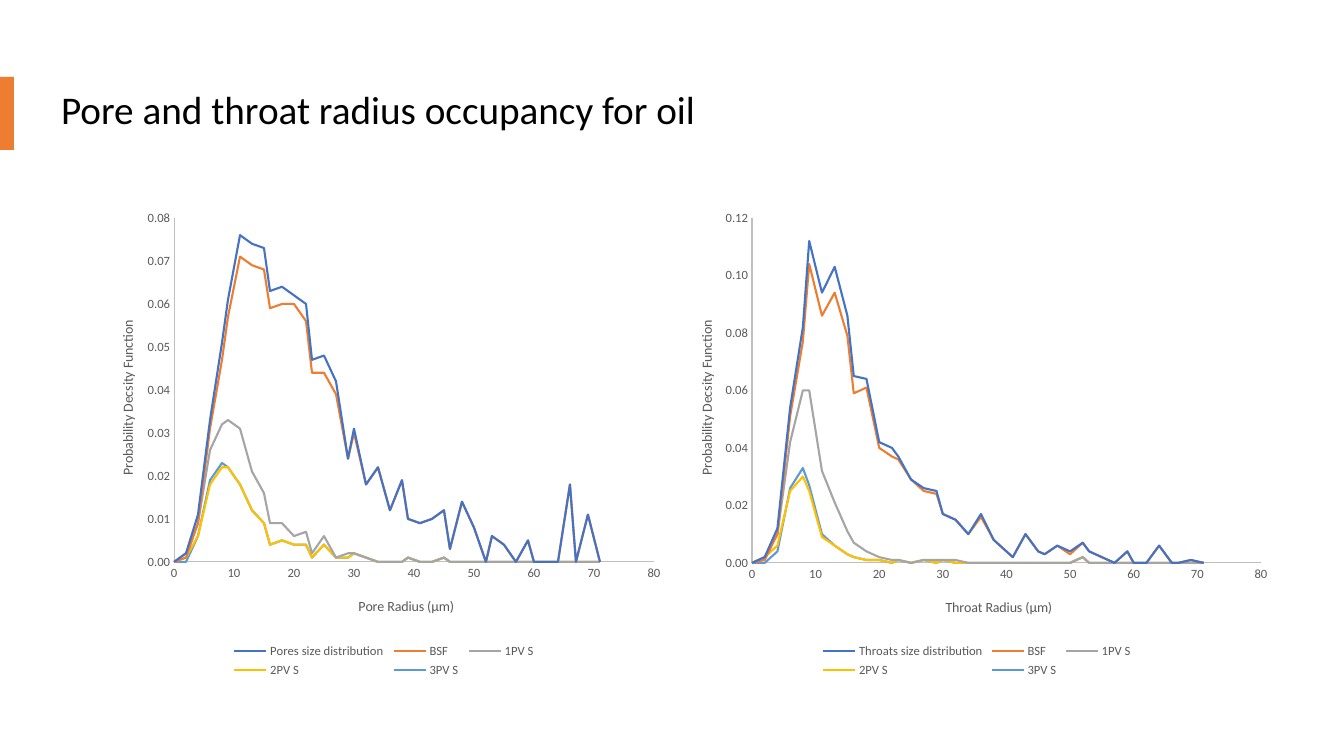
"""Build a slide comparing pore and throat radius occupancy for oil."""
import lxml.etree
import pptx
import pptx.chart.data
import pptx.dml.color
import pptx.enum.chart
import pptx.enum.shapes
import pptx.enum.text
import pptx.oxml.ns
import pptx.util

PX = 914400 / 100.8
GREY = "595959"
TOP, HEIGHT = 202, 480
RADII = [0] + [round(1.76 * k + 0.56) for k in range(1, 41)]
COLORS = ["4472C4", "ED7D31", "A5A5A5", "FFC000", "5B9BD5"]

PORES = {
    "Pores size distribution": [
        0, 2, 11, 33, 51, 61, 76, 74, 73, 63, 64, 62, 60, 47, 48, 42, 24, 31, 18, 22, 12,
        19, 10, 9, 10, 12, 3, 14, 8, 0, 6, 4, 0, 5, 0, 0, 0, 18, 0, 11],
    "BSF": [
        0, 1, 9, 31, 47, 57, 71, 69, 68, 59, 60, 60, 56, 44, 44, 39, 24, 30, 18, 22, 12,
        19, 10, 9, 10, 12, 3, 14, 8, 0, 6, 4, 0, 5, 0, 0, 0, 18, 0, 11],
    "1PV S": [
        0, 2, 9, 26, 32, 33, 31, 21, 16, 9, 9, 6, 7, 2, 6, 1, 2, 2, 1, 0, 0, 0, 1, 0, 0, 1],
    "2PV S": [
        0, 1, 6, 18, 22, 22, 18, 12, 9, 4, 5, 4, 4, 1, 4, 1, 1, 2, 1, 0, 0, 0, 1, 0, 0, 1],
    "3PV S": [
        0, 0, 6, 19, 23, 22, 18, 12, 9, 4, 5, 4, 4, 1, 4, 1, 1, 2, 1, 0, 0, 0, 1, 0, 0, 1],
}
THROATS = {
    "Throats size distribution": [
        0, 2, 12, 54, 82, 112, 94, 103, 86, 65, 64, 42, 40, 37, 29, 26, 25, 17, 15, 10, 17,
        8, 6, 2, 10, 4, 3, 6, 4, 7, 4, 2, 0, 4, 0, 0, 6, 0, 0, 1],
    "BSF": [
        0, 1, 10, 51, 77, 104, 86, 94, 79, 59, 61, 40, 37, 36, 29, 25, 24, 17, 15, 10, 16,
        8, 6, 2, 10, 4, 3, 6, 3, 7, 4, 2, 0, 4, 0, 0, 6, 0, 0, 1],
    "1PV S": [
        0, 2, 10, 42, 60, 60, 32, 21, 11, 7, 4, 2, 1, 1, 0, 1, 1, 1, 1, 0, 0, 0, 0, 0, 0,
        0, 0, 0, 0, 2],
    "2PV S": [
        0, 2, 6, 25, 30, 25, 9, 6, 3, 2, 1, 1, 0, 1, 0, 1, 0, 1, 0, 0, 0, 0, 0, 0, 0, 0, 0,
        0, 0, 2],
    "3PV S": [
        0, 0, 4, 26, 33, 27, 10, 6, 3, 2, 1, 1, 0, 1, 0, 1, 0, 1, 0, 0, 0, 0, 0, 0, 0, 0, 0,
        0, 0, 2],
}


def emu(*lengths):
    return [pptx.util.Emu(round(n * PX)) for n in lengths]


def rgb(value):
    return pptx.dml.color.RGBColor.from_string(value)


def apply(obj, fmt):
    for name, value in fmt.items():
        setattr(obj, name, value)


def set_font(font, size, color):
    apply(font, {"name": "Calibri", "size": pptx.util.Pt(size), "bold": False})
    font.color.rgb = rgb(color)


def set_line(line, color, width):
    line.color.rgb = rgb(color)
    line.width = pptx.util.Pt(width)


def set_layout(el, index, fractions, inner=False):
    qn = pptx.oxml.ns.qn
    old = el.find(qn("c:layout"))
    if old is not None:
        el.remove(old)
    layout = lxml.etree.Element(qn("c:layout"))
    el.insert(index, layout)
    manual = lxml.etree.SubElement(layout, qn("c:manualLayout"))
    items = [("layoutTarget", "inner")] if inner else []
    items += [("xMode", "edge"), ("yMode", "edge")]
    items += [(key, str(round(value, 4))) for key, value in zip("xywh", fractions)]
    for key, value in items:
        lxml.etree.SubElement(manual, qn("c:" + key)).set("val", value)


def format_axis(axis, title, number_format, fractions, rotation, limits):
    apply(axis, {"has_major_gridlines": False, "has_minor_gridlines": False,
                 "major_tick_mark": pptx.enum.chart.XL_TICK_MARK.NONE,
                 "minor_tick_mark": pptx.enum.chart.XL_TICK_MARK.NONE, **limits})
    apply(axis.tick_labels, {"number_format": number_format,
                             "number_format_is_linked": False})
    set_font(axis.tick_labels.font, 9, GREY)
    set_line(axis.format.line, "BFBFBF", 0.75)
    tf = axis.axis_title.text_frame
    p = tf.paragraphs[0]
    r = p.add_run()
    r.text = title
    set_font(p.font, 10, GREY)
    set_font(r.font, 10, GREY)
    el = axis.axis_title._element
    el.xpath(".//a:bodyPr")[0].set("rot", str(rotation))
    set_layout(el, 1, fractions)


def add_scatter(s, left, width, series, x_title, x_format, plot, legend, x_pos, y_pos):
    def fractions(x, y, *size):
        return [(x - left) / width, (y - TOP) / HEIGHT,
                *(n / whole for n, whole in zip(size, (width, HEIGHT)))]

    data = pptx.chart.data.XyChartData(number_format="General")
    for name, values in series.items():
        points = data.add_series(name)
        padded = values + [0] * (len(RADII) - len(values))
        for x, y in zip(RADII, padded):
            points.add_data_point(x, y / 1000)
    kind = pptx.enum.chart.XL_CHART_TYPE.XY_SCATTER_SMOOTH_NO_MARKERS
    chart = s.shapes.add_chart(kind, *emu(left, TOP, width, HEIGHT), data).chart
    apply(chart, {"has_title": False, "has_legend": True})
    set_font(chart.font, 10, "000000")
    apply(chart.legend, {"position": pptx.enum.chart.XL_LEGEND_POSITION.BOTTOM,
                         "include_in_layout": False})
    set_font(chart.legend.font, 9, GREY)
    set_layout(chart.legend._element, 1, fractions(*legend))
    set_layout(chart._chartSpace.chart.plotArea, 0, fractions(*plot), inner=True)
    chart.plots[0].vary_by_categories = False
    for ser, color in zip(chart.plots[0].series, COLORS):
        ser.smooth = True
        set_line(ser.format.line, color, 1.5)
    format_axis(chart.category_axis, x_title, x_format, fractions(*x_pos), 0,
                {"minimum_scale": 0, "maximum_scale": 80})
    format_axis(chart.value_axis, "Probability Decsity Function", "#,##0.00",
                fractions(*y_pos), -5400000, {"minimum_scale": 0})


def add_title(s, text):
    sp = s.shapes.title
    apply(sp, dict(zip(("left", "top", "width", "height"), emu(51, 57, 1159, 109))))
    tf = sp.text_frame
    apply(tf, {"text": text, "word_wrap": True,
               "vertical_anchor": pptx.enum.text.MSO_ANCHOR.MIDDLE})
    p = tf.paragraphs[0]
    apply(p, {"alignment": pptx.enum.text.PP_ALIGN.LEFT, "line_spacing": 0.9})
    set_font(p.runs[0].font, 28, "000000")


def add_accent(s):
    kind = pptx.enum.shapes.MSO_SHAPE.RECTANGLE
    sp = s.shapes.add_shape(kind, *emu(0, 77, 14, 73))
    sp.shadow.inherit = False
    sp.fill.solid()
    sp.fill.fore_color.rgb = rgb("ED7D31")
    sp.line.fill.background()


def main():
    prs = pptx.Presentation()
    prs.slide_width, prs.slide_height = emu(1344, 756)
    s = prs.slides.add_slide(prs.slide_layouts[5])
    add_title(s, "Pore and throat radius occupancy for oil")
    add_accent(s)
    add_scatter(s, 93, 580, PORES, "Pore Radius (µm)", "General",
                plot=(174, 218, 480, 344), legend=(228, 640, 312, 42),
                x_pos=(356, 595), y_pos=(116, 318))
    add_scatter(s, 672, 608, THROATS, "Throat Radius (µm)", "#,##0",
                plot=(752, 218, 509, 345), legend=(818, 640, 318, 42),
                x_pos=(943, 596), y_pos=(695, 318))
    prs.save("out.pptx")


if __name__ == "__main__":
    main()
